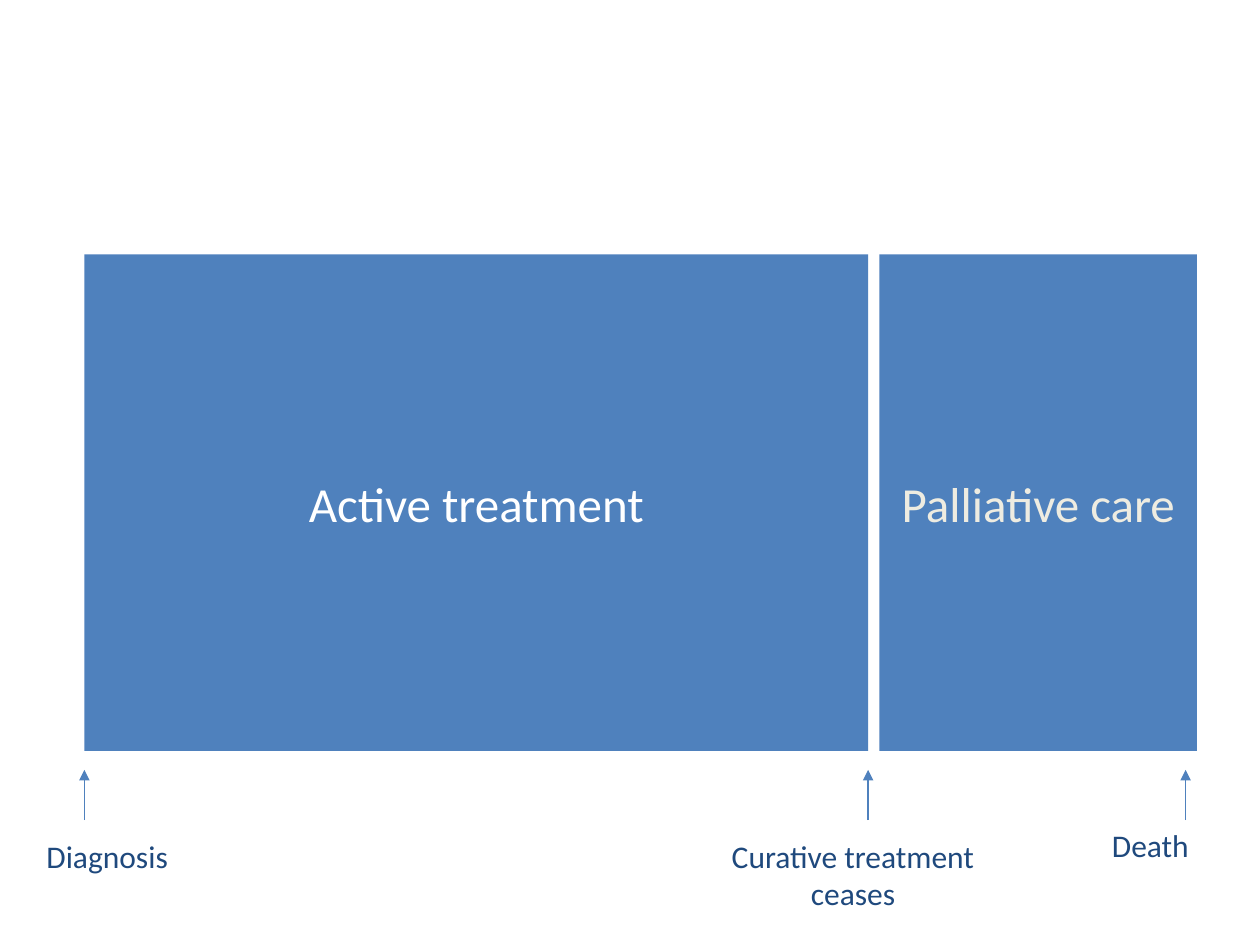
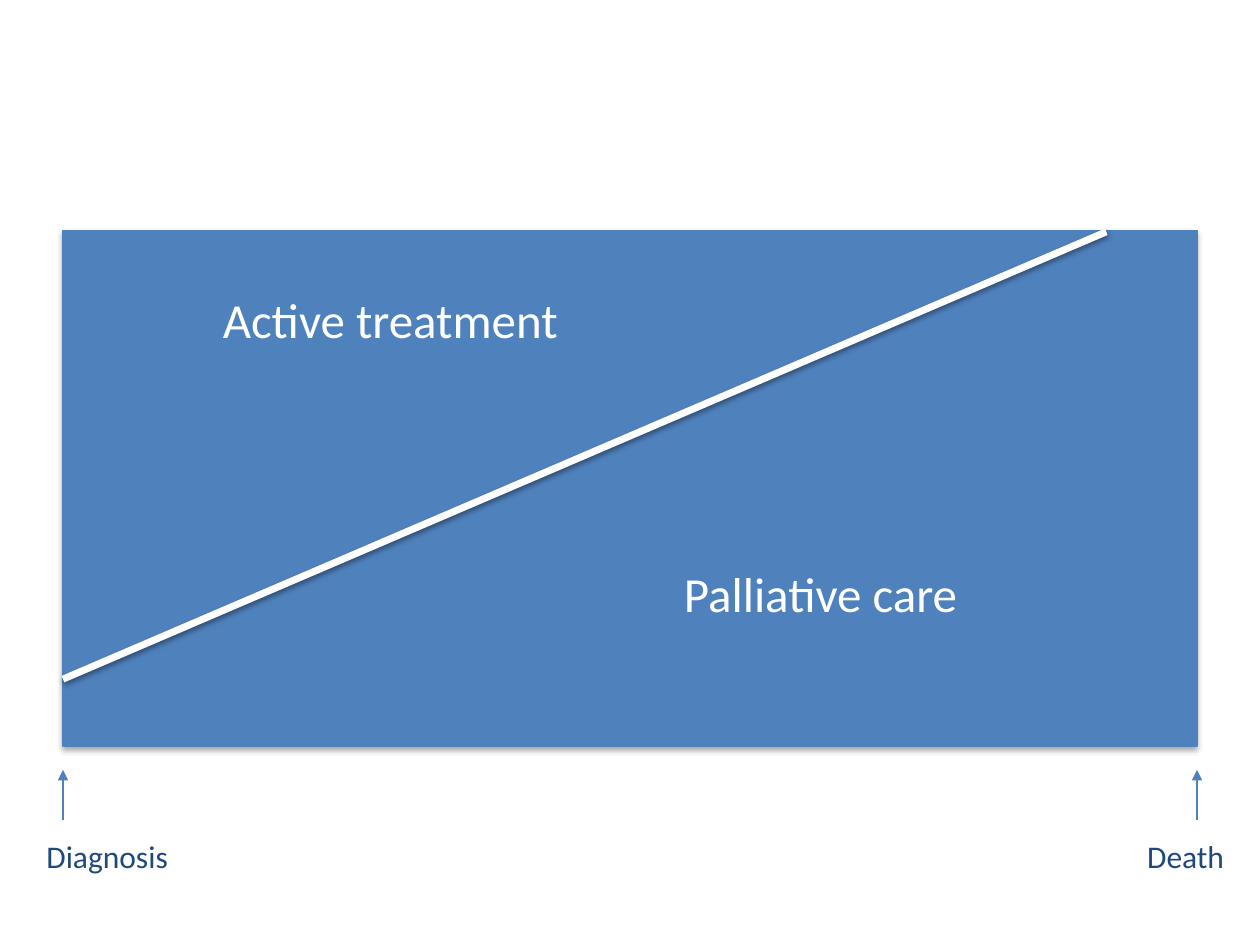
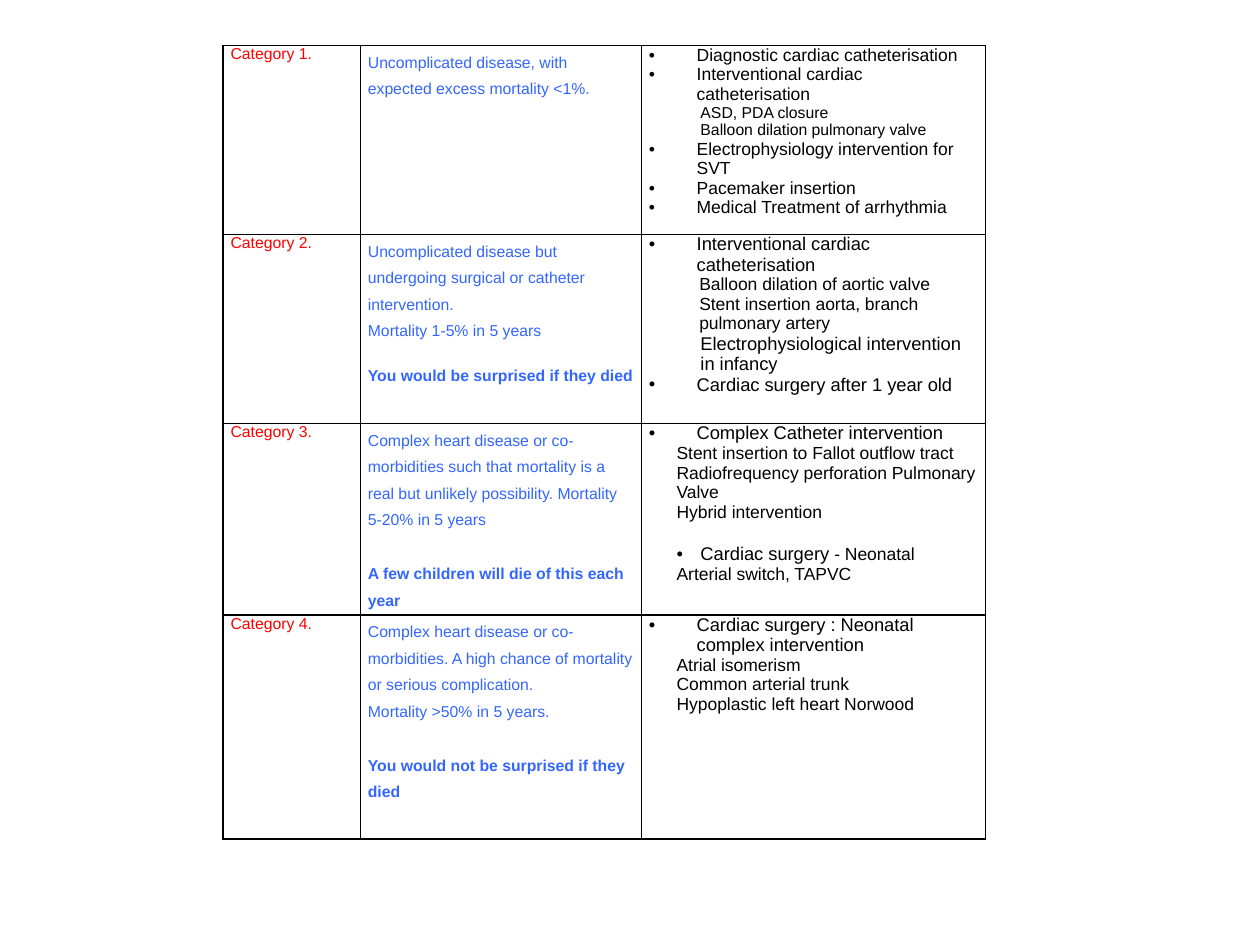
from dataclasses import dataclass

from lxml import etree
from pptx import Presentation
from pptx import util as u
from pptx.dml.color import RGBColor
from pptx.enum import shapes, text
from pptx.oxml.ns import qn

# Grid: 100 columns by 75 rows
WIDTH, HEIGHT = u.Inches(10), u.Inches(7.5)
COLS, ROWS = 100, 75

BLUE, NAVY, CREAM, WHITE = "4F81BD", "1F497D", "EEECE1", "FFFFFF"
BLACK, RED, BRIGHT = "000000", "FF0000", "3366FF"
ARROW_TOP, ARROW_FOOT, LABEL_ROW = 61.1, 65.1, 65.9


@dataclass
class Style:
    size: float
    colour: str = BLACK
    indent: float = 0
    hang: float = 0
    spacing: float = 1
    before: float = 0
    bold: bool = False


LABEL = Style(9, RED)
BODY = Style(9, BRIGHT, spacing=1.5)
KEY = Style(9, BRIGHT, spacing=1.5, before=15.5, bold=True)
KEY_TIGHT = Style(9, BRIGHT, before=15.5, bold=True)
ITEM = Style(10, indent=0.38, hang=0.38)
ITEM_BIG = Style(10.5, indent=0.38, hang=0.38)
ITEM_INNER = Style(10.5, indent=0.41, hang=0.19, before=12.65)
SUB_SMALL = Style(9, indent=0.41)
SUB = Style(10, indent=0.4)
SUB_BIG = Style(10.5, indent=0.41)
PLAIN = Style(10, indent=0.22)

# One row per category; each cell is a list of (style, text, smaller ending)
CATEGORIES = [
    (1.5, [(LABEL, "Category 1.")],
     [(BODY, "Uncomplicated disease, with expected excess mortality <1%.")],
     [(ITEM, "Diagnostic cardiac catheterisation"),
      (ITEM, "Interventional cardiac catheterisation"),
      (SUB_SMALL, "ASD, PDA closure"),
      (SUB_SMALL, "Balloon dilation pulmonary valve"),
      (ITEM, "Electrophysiology intervention for SVT"),
      (ITEM, "Pacemaker insertion"),
      (ITEM, "Medical Treatment of arrhythmia")]),
    (1.5, [(LABEL, "Category 2.")],
     [(BODY, "Uncomplicated disease but undergoing surgical or catheter intervention."),
      (BODY, "Mortality 1-5% in 5 years"),
      (KEY_TIGHT, "You would be surprised if they died")],
     [(ITEM_BIG, "Interventional cardiac catheterisation"),
      (SUB, "Balloon dilation of aortic valve"),
      (SUB, "Stent insertion aorta, branch"),
      (SUB, "pulmonary artery"),
      (SUB_BIG, "Electrophysiological intervention"),
      (SUB_BIG, "in infancy"),
      (ITEM_BIG, "Cardiac surgery after 1 year old")]),
    (1.52, [(LABEL, "Category 3.")],
     [(BODY, "Complex heart disease or co-morbidities such that mortality is a real "
             "but unlikely possibility. Mortality 5-20% in 5 years"),
      (KEY, "A few children will die of this each year")],
     [(ITEM_BIG, "Complex Catheter intervention"),
      (PLAIN, "Stent insertion to Fallot outflow tract"),
      (PLAIN, "Radiofrequency perforation Pulmonary Valve"),
      (PLAIN, "Hybrid intervention"),
      (ITEM_INNER, "Cardiac surgery", " - Neonatal"),
      (PLAIN, "Arterial switch, TAPVC")]),
    (1.78, [(LABEL, "Category 4.")],
     [(BODY, "Complex heart disease or co-morbidities. A high chance of mortality "
             "or serious complication."),
      (BODY, "Mortality >50% in 5 years."),
      (KEY, "You would not be surprised if they died")],
     [(ITEM_BIG, "Cardiac surgery : Neonatal complex intervention"),
      (PLAIN, "Atrial isomerism"),
      (PLAIN, "Common arterial trunk"),
      (PLAIN, "Hypoplastic left heart Norwood")]),
]


def rgb(hex_colour):
    return RGBColor.from_string(hex_colour)


def x(cols):
    return u.Emu(round(WIDTH * cols / COLS))


def y(rows):
    return u.Emu(round(HEIGHT * rows / ROWS))


def add_xml(parent, tag, **attrs):
    return etree.SubElement(parent, qn(tag), {k: str(v) for k, v in attrs.items()})


def style_run(r, font, size, colour, bold=False):
    r.font.name, r.font.size, r.font.bold = font, u.Pt(size), bold
    r.font.color.rgb = rgb(colour)


def set_effects(sp, opacity=0, dist=0):
    """Leave the shape flat, or give it a soft shadow straight below."""
    effects = add_xml(sp._element.spPr, "a:effectLst")
    if opacity:
        shadow = add_xml(effects, "a:outerShdw", blurRad=u.Pt(3.1), dist=u.Pt(dist),
                         dir=90 * 60000, rotWithShape=0)
        colour = add_xml(shadow, "a:srgbClr", val=BLACK)
        add_xml(colour, "a:alpha", val=opacity * 1000)


def write(sp, words, size, colour, align):
    tf = sp.text_frame
    tf.word_wrap = True
    tf.text = words
    p = tf.paragraphs[0]
    p.alignment = align
    style_run(p.runs[0], "Calibri", size, colour)


def add_block(s, left, top, width, height, words="", colour=WHITE):
    sp = s.shapes.add_shape(shapes.MSO_SHAPE.RECTANGLE, x(left), y(top), x(width), y(height))
    sp.fill.solid()
    sp.fill.fore_color.rgb = rgb(BLUE)
    sp.line.fill.background()
    if words:
        sp.text_frame.vertical_anchor = text.MSO_ANCHOR.MIDDLE
        write(sp, words, 28, colour, text.PP_ALIGN.CENTER)
    return sp


def add_label(s, left, top, width, height, words, size=18, colour=NAVY, centred=False):
    sp = s.shapes.add_textbox(x(left), y(top), x(width), y(height))
    write(sp, words, size, colour,
          text.PP_ALIGN.CENTER if centred else text.PP_ALIGN.LEFT)


def add_line(s, start, end, colour=BLUE, width=0.75):
    line = s.shapes.add_connector(shapes.MSO_CONNECTOR.STRAIGHT,
                                  x(start[0]), y(start[1]), x(end[0]), y(end[1]))
    line.line.color.rgb = rgb(colour)
    line.line.width = u.Pt(width)
    return line


def add_time_marks(s, columns):
    for col in columns:
        arrow = add_line(s, (col, ARROW_FOOT), (col, ARROW_TOP))
        add_xml(arrow.line._get_or_add_ln(), "a:tailEnd", type="triangle")
        set_effects(arrow)
    add_label(s, 2.7, LABEL_ROW, 18.1, 4, "Diagnosis")


def fill_cell(cell, lines):
    cell.margin_left = cell.margin_right = u.Inches(0.06)
    cell.margin_top = cell.margin_bottom = 0
    for side in ("L", "R", "T", "B"):
        border = add_xml(cell._tc.get_or_add_tcPr(), f"a:ln{side}", w=u.Pt(1))
        add_xml(add_xml(border, "a:solidFill"), "a:srgbClr", val=BLACK)
    cell.fill.solid()
    cell.fill.fore_color.rgb = rgb(WHITE)
    tf = cell.text_frame
    for i, (style, words, *ending) in enumerate(lines):
        p = tf.paragraphs[0] if i == 0 else tf.add_paragraph()
        p.text = words
        style_run(p.runs[0], "Arial", style.size, style.colour, style.bold)
        for extra in ending:
            r = p.add_run()
            r.text = extra
            style_run(r, "Arial", style.size - 0.5, style.colour)
        p.line_spacing = style.spacing
        p.space_before = u.Pt(style.before)
        props = p._p.get_or_add_pPr()
        props.set("marL", str(u.Inches(style.indent)))
        props.set("indent", str(-u.Inches(style.hang)))
        if style.hang:
            add_xml(props, "a:buFont", typeface="Arial")
            add_xml(props, "a:buChar", char="•")


def build_sequential(s):
    """Palliative care begins when active treatment stops."""
    add_block(s, 6.7, 20.2, 62.2, 39.4, "Active treatment")
    add_block(s, 69.8, 20.2, 25.2, 39.4, "Palliative care", CREAM)
    for sp in s.shapes:
        set_effects(sp)
    add_time_marks(s, (6.7, 68.9, 94.1))
    add_label(s, 56.3, LABEL_ROW, 22.8, 7, "Curative treatment ceases", centred=True)
    add_label(s, 85.4, ARROW_FOOT, 11.8, 4, "Death", centred=True)


def build_gradual(s):
    """Palliative care grows as active treatment shrinks."""
    block = add_block(s, 5, 18.3, 90, 40.9)
    block.line.color.rgb = rgb(BLUE)
    block.line.width = u.Pt(0.75)
    set_effects(block, 35, 1.8)
    add_label(s, 16.7, 22.5, 36, 5.7, "Active treatment", 28, WHITE)
    add_label(s, 53.3, 44.2, 26, 5.7, "Palliative care", 28, WHITE)
    add_time_marks(s, (5, 95))
    add_label(s, 88.2, LABEL_ROW, 11.8, 4, "Death", centred=True)
    divide = add_line(s, (5, 53.9), (87.8, 18.4), WHITE, 4)
    set_effects(divide, 38, 1.6)


def build_categories(s):
    widths = (1.09, 2.23, 2.73)
    table = s.shapes.add_table(len(CATEGORIES), len(widths), x(17.7), y(3.6),
                               x(60.5), y(63)).table
    table.first_row = table.horz_banding = False
    for column, width in zip(table.columns, widths):
        column.width = u.Inches(width)
    for row, (height, *cells) in zip(table.rows, CATEGORIES):
        row.height = u.Inches(height)
        for cell, lines in zip(row.cells, cells):
            fill_cell(cell, lines)


def main():
    prs = Presentation()
    prs.slide_width, prs.slide_height = WIDTH, HEIGHT
    for build in (build_sequential, build_gradual, build_categories):
        build(prs.slides.add_slide(prs.slide_layouts[6]))
    prs.save("out.pptx")


if __name__ == "__main__":
    main()
